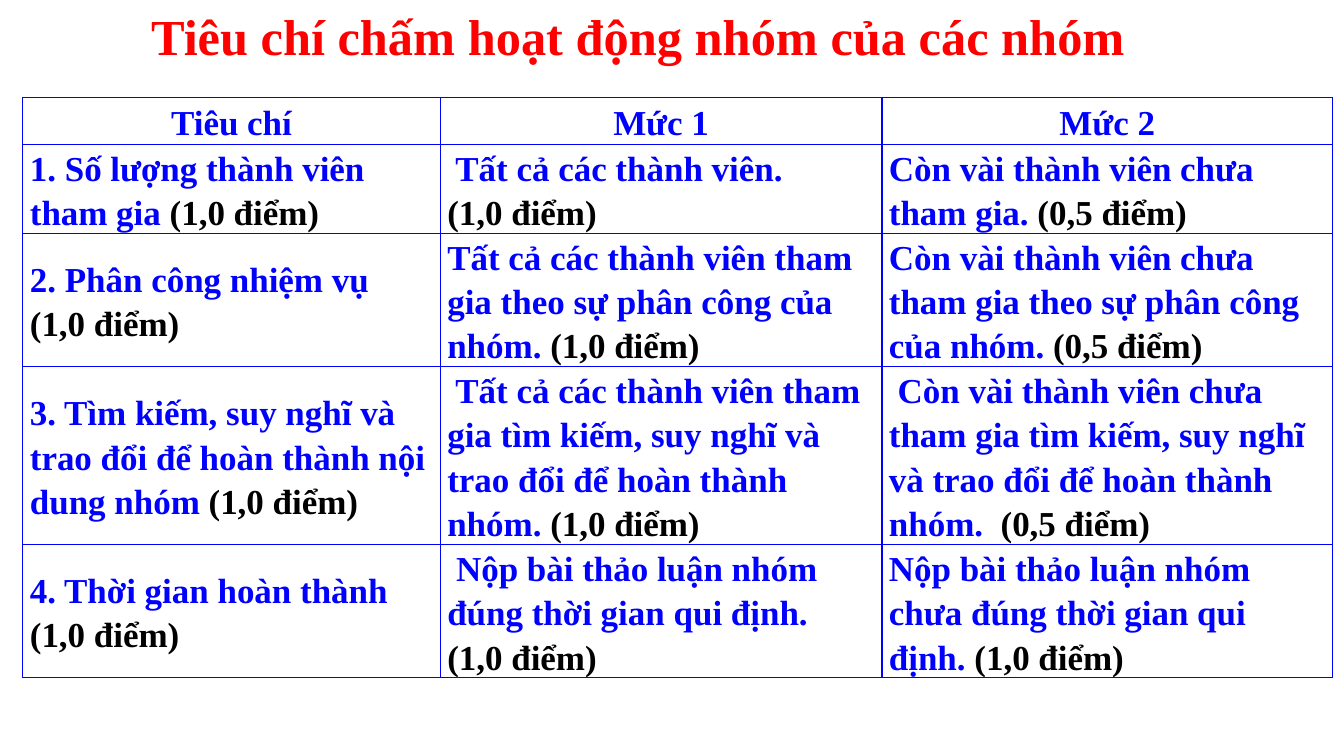
from lxml.etree import SubElement
from pptx import Presentation
from pptx.dml.color import RGBColor
from pptx.enum.text import MSO_ANCHOR, MSO_AUTO_SIZE, PP_ALIGN
from pptx.oxml import parse_xml
from pptx.oxml.ns import nsdecls, qn
from pptx.util import Inches, Pt

BLUE = RGBColor(0x00, 0x00, 0xFF)
RED = RGBColor(0xFF, 0x00, 0x00)
BLACK = RGBColor(0x00, 0x00, 0x00)
WHITE = RGBColor(0xFF, 0xFF, 0xFF)

TITLE = "Tiêu chí chấm hoạt động nhóm của các nhóm"
HEADINGS = ["Tiêu chí", "Mức 1", "Mức 2"]
CRITERIA = [
    ["1. Số lượng thành viên tham gia (1,0 điểm)",
     " Tất cả các thành viên.\n(1,0 điểm)",
     "Còn vài thành viên chưa tham gia. (0,5 điểm)"],
    ["2. Phân công nhiệm vụ\n(1,0 điểm)",
     "Tất cả các thành viên tham gia theo sự phân công của nhóm. (1,0 điểm)",
     "Còn vài thành viên chưa tham gia theo sự phân công của nhóm. (0,5 điểm)"],
    ["3. Tìm kiếm, suy nghĩ và trao đổi để hoàn thành nội dung nhóm (1,0 điểm)",
     " Tất cả các thành viên tham gia tìm kiếm, suy nghĩ và trao đổi để hoàn thành nhóm. (1,0 điểm)",
     " Còn vài thành viên chưa tham gia tìm kiếm, suy nghĩ và trao đổi để hoàn thành nhóm.  (0,5 điểm)"],
    ["4. Thời gian hoàn thành (1,0 điểm)",
     " Nộp bài thảo luận nhóm đúng thời gian qui định.\n(1,0 điểm)",
     "Nộp bài thảo luận nhóm chưa đúng thời gian qui định. (1,0 điểm)"],
]
COLUMN_WIDTHS = [31.06, 32.86, 33.53]
HEADER_HEIGHT = 6.18
LINE_HEIGHT = 5.87
LINES_PER_ROW = [2, 3, 4, 3]


class RubricSlide:
    """Holds the style and the slide; lengths are percentages of the slide."""

    font_name = "Times New Roman"
    title_size = Pt(36)
    table_size = Pt(25)
    line_spacing = 1.15
    border_width = Pt(1)

    def __init__(self, presentation):
        self.width = presentation.slide_width
        self.height = presentation.slide_height
        self.slide = presentation.slides.add_slide(presentation.slide_layouts[6])

    def across(self, share):
        return round(self.width * share / 100)

    def down(self, share):
        return round(self.height * share / 100)

    def style_run(self, run, size, color):
        run.font.name = self.font_name
        run.font.size = size
        run.font.bold = True
        run.font.color.rgb = color

    def add_title(self, text, left, top, width, height):
        box = self.slide.shapes.add_textbox(
            self.across(left), self.down(top), self.across(width), self.down(height))
        text_frame = box.text_frame
        text_frame.word_wrap = False
        text_frame.auto_size = MSO_AUTO_SIZE.SHAPE_TO_FIT_TEXT
        text_frame.text = text
        self.style_run(text_frame.paragraphs[0].runs[0], self.title_size, RED)

    def add_table(self, rows, left, top, column_widths, row_heights):
        table = self.slide.shapes.add_table(
            len(rows), len(column_widths), self.across(left), self.down(top),
            self.across(sum(column_widths)), self.down(sum(row_heights))).table
        table.first_row = table.horz_banding = False
        for column, width in zip(table.columns, column_widths):
            column.width = self.across(width)
        for row, height in zip(table.rows, row_heights):
            row.height = self.down(height)
        for row_index, texts in enumerate(rows):
            for column_index, text in enumerate(texts):
                cell = table.cell(row_index, column_index)
                is_header = row_index == 0
                self.fill_cell(cell, text, PP_ALIGN.CENTER if is_header else PP_ALIGN.LEFT)
                if is_header or column_index == 0:
                    cell.vertical_anchor = MSO_ANCHOR.MIDDLE

    def fill_cell(self, cell, text, alignment):
        """Write blue text with the bracketed score in black."""
        cell.fill.solid()
        cell.fill.fore_color.rgb = WHITE
        cell.margin_left = cell.margin_right = Inches(0.07)
        cell.margin_top = cell.margin_bottom = 0
        self.add_borders(cell)
        cell.text_frame.text = text
        for paragraph in cell.text_frame.paragraphs:
            criterion, bracket, score = paragraph.text.partition("(")
            paragraph.clear()
            paragraph.alignment = alignment
            paragraph.line_spacing = self.line_spacing
            for part, color in ((criterion, BLUE), (bracket + score, BLACK)):
                if part:
                    run = paragraph.add_run()
                    run.text = part
                    self.style_run(run, self.table_size, color)

    def add_borders(self, cell):
        properties = cell._tc.get_or_add_tcPr()
        for position, side in enumerate(("lnL", "lnR", "lnT", "lnB")):
            line = parse_xml(f'<a:{side} {nsdecls("a")} w="{self.border_width}"/>')
            fill = SubElement(line, qn("a:solidFill"))
            SubElement(fill, qn("a:srgbClr"), val=str(BLUE))
            properties.insert(position, line)


def main():
    presentation = Presentation()
    presentation.slide_width = Inches(13.33)
    presentation.slide_height = Inches(7.5)
    rubric = RubricSlide(presentation)
    row_heights = [HEADER_HEIGHT] + [LINE_HEIGHT * lines for lines in LINES_PER_ROW]
    rubric.add_table([HEADINGS] + CRITERIA, 1.7, 12.9, COLUMN_WIDTHS, row_heights)
    rubric.add_title(TITLE, 10.5, 0, 74.65, 9.47)
    presentation.save("out.pptx")


if __name__ == "__main__":
    main()
